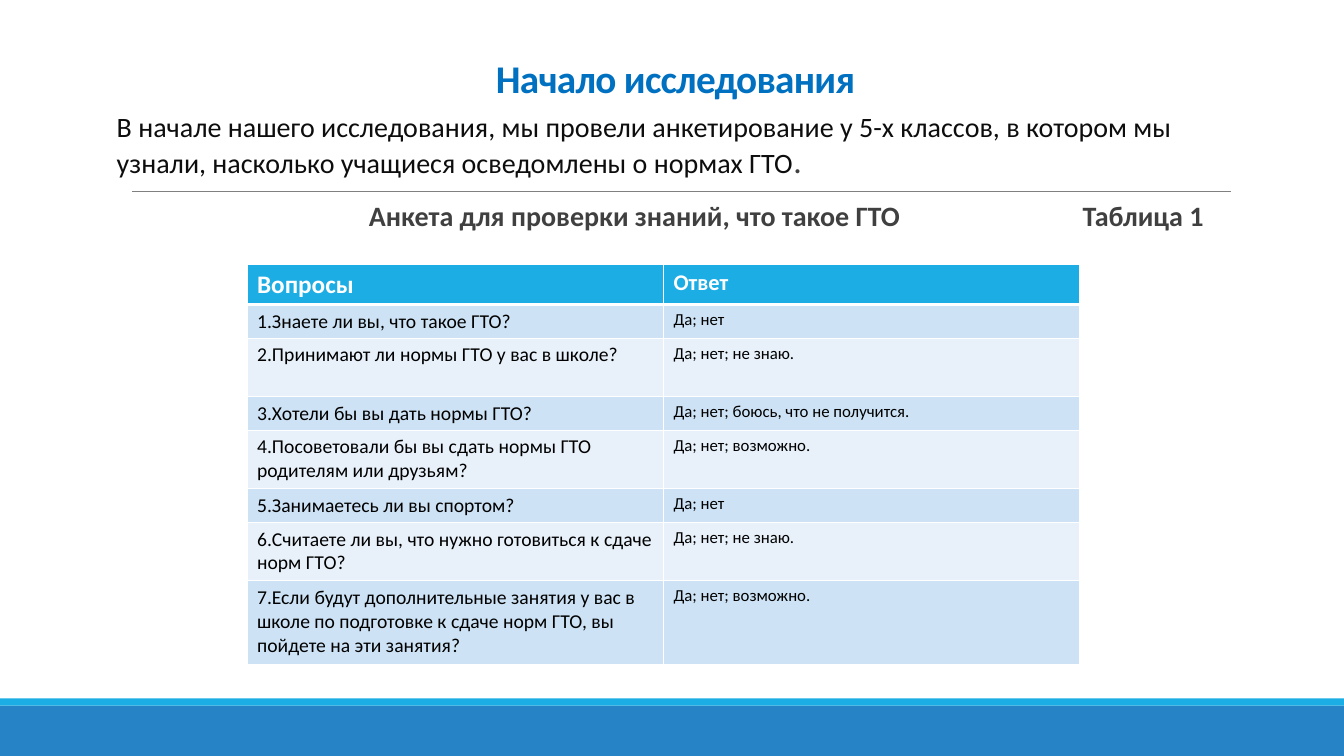
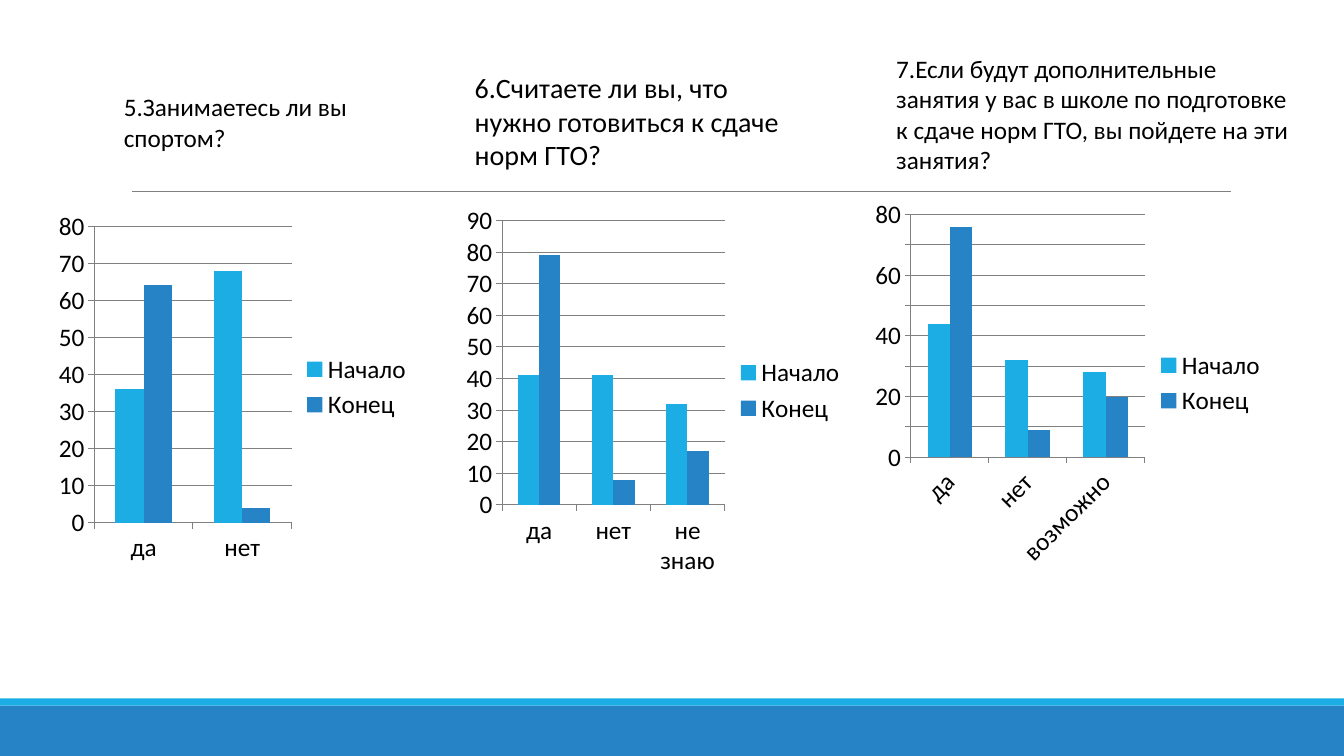
"""Build two slides about a school survey on the GTO fitness standards."""
from lxml import etree
from pptx import Presentation
from pptx.chart import data as chart_data
from pptx.dml.color import RGBColor
from pptx.enum import chart as chart_enum, shapes, text
from pptx.oxml import ns
from pptx.util import Inches, Pt

FONT = "Calibri"
BLACK = RGBColor(0x00, 0x00, 0x00)
WHITE = RGBColor(0xFF, 0xFF, 0xFF)
INK = RGBColor(0x0D, 0x0D, 0x0D)
DARK_GRAY = RGBColor(0x40, 0x40, 0x40)
GRAY = RGBColor(0x80, 0x80, 0x80)
TITLE_BLUE = RGBColor(0x00, 0x70, 0xC0)
SKY = RGBColor(0x1C, 0xAD, 0xE4)
BLUE = RGBColor(0x26, 0x83, 0xC6)
ROW_FILLS = (RGBColor(0xCD, 0xE3, 0xF5), RGBColor(0xE8, 0xF1, 0xFA))

QUESTIONS = [
    ("1.Знаете ли вы, что такое ГТО?", "Да; нет", 0.33),
    ("2.Принимают ли нормы ГТО у вас в школе?", "Да; нет; не знаю.", 0.58),
    ("3.Хотели бы вы дать нормы ГТО?", "Да; нет; боюсь, что не получится.", 0.33),
    ("4.Посоветовали бы вы сдать нормы ГТО родителям или друзьям?",
     "Да; нет; возможно.", 0.58),
    ("5.Занимаетесь ли вы спортом?", "Да; нет", 0.33),
    ("6.Считаете ли вы, что нужно готовиться к сдаче норм ГТО?",
     "Да; нет; не знаю.", 0.58),
    ("7.Если будут дополнительные занятия у вас в школе по подготовке "
     "к сдаче норм ГТО, вы пойдете на эти занятия?", "Да; нет; возможно.", 0.83),
]

RESULTS = [
    (4, (1.13, 0.86, 2.97, 0.71), 18, (0.51, 2.02, 3.68, 3.64),
     ("да", "нет"), (36, 68), (64, 4)),
    (5, (4.61, 0.65, 3.47, 1.11), 20, (4.55, 1.96, 3.94, 3.83),
     ("да", "нет", "не знаю"), (41, 41, 32), (79, 8, 17)),
    (6, (8.79, 0.48, 4.19, 1.31), 18, (8.6, 1.9, 4.06, 3.8),
     ("да", "нет", "возможно"), (44, 32, 28), (76, 9, 20)),
]


def inches(place):
    return [Inches(value) for value in place]


def style_font(font, size, color, bold=False):
    font.name = FONT
    font.size = Pt(size)
    font.bold = bold
    font.color.rgb = color


def add_text(page, place, wording, size, color=BLACK, bold=False, spacing=None):
    box = page.shapes.add_textbox(*inches(place))
    box.text_frame.word_wrap = True
    box.text_frame.text = wording
    para = box.text_frame.paragraphs[0]
    para.line_spacing = spacing
    style_font(para.runs[0].font, size, color, bold)
    return box


def add_band(page, top, height, color):
    band = page.shapes.add_shape(
        shapes.MSO_SHAPE.RECTANGLE, *inches((0, top, 13.33, height)))
    band.shadow.inherit = False
    band.fill.solid()
    band.fill.fore_color.rgb = color
    band.line.fill.background()


def add_page(deck):
    page = deck.slides.add_slide(deck.slide_layouts[6])
    add_band(page, 7, 0.5, BLUE)
    add_band(page, 6.93, 0.07, SKY)
    rule = page.shapes.add_connector(
        shapes.MSO_CONNECTOR.STRAIGHT, *inches((1.31, 1.9, 12.21, 1.9)))
    rule.line.color.rgb = GRAY
    rule.line.width = Pt(0.5)
    etree.SubElement(rule._element.spPr, ns.qn("a:effectLst"))
    return page


def add_title(page, wording):
    box = add_text(page, (1.2, 0.31, 11, 0.75), wording, 28, TITLE_BLUE, True, 0.85)
    box.text_frame.vertical_anchor = text.MSO_ANCHOR.BOTTOM
    para = box.text_frame.paragraphs[0]
    para.alignment = text.PP_ALIGN.CENTER
    para.runs[0].font._element.set("spc", "-50")


def set_borders(cell, bottom):
    properties = cell._tc.get_or_add_tcPr()
    for side, width in (("lnL", 1), ("lnR", 1), ("lnT", 1), ("lnB", bottom)):
        border = etree.SubElement(
            properties, ns.qn("a:" + side), w=str(Pt(width)))
        fill = etree.SubElement(border, ns.qn("a:solidFill"))
        etree.SubElement(fill, ns.qn("a:srgbClr"), val=str(WHITE))


def fill_cell(cell, wording, size, color, fill, header=False):
    set_borders(cell, 3 if header else 1)
    cell.fill.solid()
    cell.fill.fore_color.rgb = fill
    cell.text_frame.text = wording
    style_font(cell.text_frame.paragraphs[0].runs[0].font, size, color, header)


def add_survey_table(page):
    table = page.shapes.add_table(
        len(QUESTIONS) + 1, 2, *inches((2.45, 2.62, 8.26, 3.98))).table
    table.rows[0].height = Inches(0.36)
    for column, (heading, size) in enumerate((("Вопросы", 18), ("Ответ", 16))):
        table.columns[column].width = Inches(4.13)
        fill_cell(table.cell(0, column), heading, size, WHITE, SKY, True)
    for row, (question, answers, height) in enumerate(QUESTIONS, 1):
        table.rows[row].height = Inches(height)
        fill = ROW_FILLS[(row - 1) % 2]
        fill_cell(table.cell(row, 0), question, 14, BLACK, fill)
        fill_cell(table.cell(row, 1), answers, 12, BLACK, fill)


def add_result_chart(page, place, answers, start, finish):
    data = chart_data.CategoryChartData()
    data.categories = answers
    data.add_series("Начало", start)
    data.add_series("Конец", finish)
    chart = page.shapes.add_chart(
        chart_enum.XL_CHART_TYPE.COLUMN_CLUSTERED, *inches(place), data).chart
    style_font(chart.font, 18, BLACK)
    chart.has_title = False
    chart.has_legend = True
    chart.legend.position = chart_enum.XL_LEGEND_POSITION.RIGHT
    chart.legend.include_in_layout = False
    plot = chart.plots[0]
    plot.vary_by_categories = False
    plot.gap_width = 150
    plot.overlap = 0
    for series, color in zip(plot.series, (SKY, BLUE)):
        series.format.fill.solid()
        series.format.fill.fore_color.rgb = color
    chart.value_axis.has_major_gridlines = True
    for axis in (chart.category_axis, chart.value_axis):
        axis.major_tick_mark = chart_enum.XL_TICK_MARK.OUTSIDE
        axis.format.line.color.rgb = GRAY
    chart.value_axis.major_gridlines.format.line.color.rgb = GRAY


def build_survey_page(deck):
    page = add_page(deck)
    add_title(page, "Начало исследования")
    intro = add_text(
        page, (1.06, 1.08, 11.14, 0.8),
        "В начале нашего исследования, мы провели анкетирование у 5-х классов, "
        "в котором мы узнали, насколько учащиеся осведомлены о нормах ГТО",
        20, INK, spacing=0.9)
    span = intro.text_frame.paragraphs[0].add_run()
    span.text = "."
    style_font(span.font, 24, DARK_GRAY)
    add_text(page, (3.56, 1.92, 5.8, 0.44),
             "Анкета для проверки знаний, что такое ГТО", 20, DARK_GRAY, True)
    add_text(page, (10.64, 1.92, 1.6, 0.44), "Таблица 1", 20, DARK_GRAY, True)
    add_survey_table(page)


def build_results_page(deck):
    page = add_page(deck)
    for number, text_place, size, chart_place, answers, start, finish in RESULTS:
        add_text(page, text_place, QUESTIONS[number][0], size)
        add_result_chart(page, chart_place, answers, start, finish)


def main():
    deck = Presentation()
    deck.slide_width = Inches(13.33)
    deck.slide_height = Inches(7.5)
    build_survey_page(deck)
    build_results_page(deck)
    deck.save("out.pptx")


if __name__ == "__main__":
    main()
